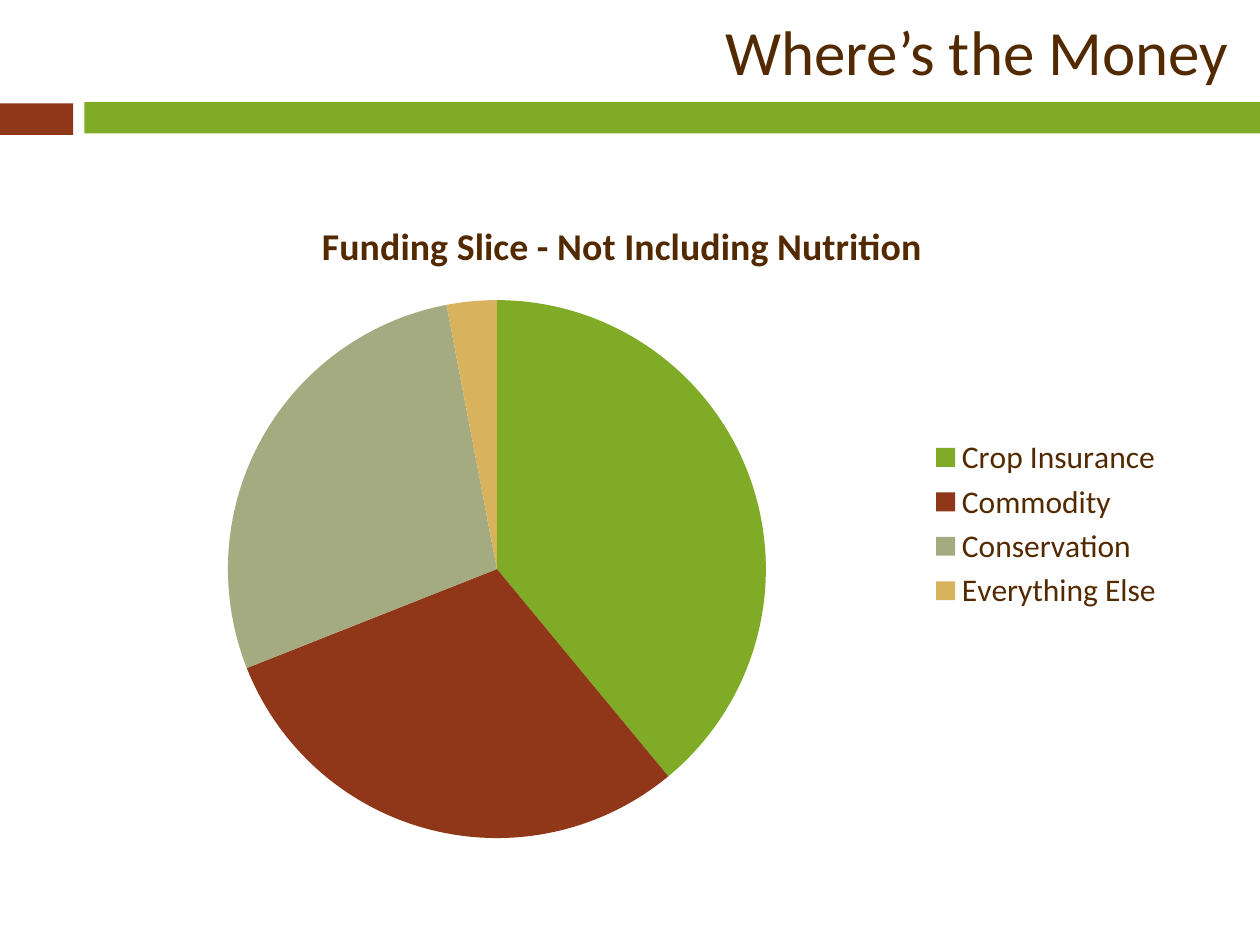
from dataclasses import dataclass

from pptx import Presentation
from pptx.chart.data import CategoryChartData as Data
from pptx.dml.color import RGBColor as Rgb
from pptx.enum.chart import XL_CHART_TYPE as Kind, XL_LEGEND_POSITION as Side
from pptx.enum.shapes import MSO_SHAPE as Form
from pptx.enum.text import MSO_ANCHOR as Anchor, PP_ALIGN as Align
from pptx.util import Inches, Pt

HUES = {
    "text": "532A00",
    "green": "7FAB26",
    "rust": "90371A",
    "sage": "A5AB81",
    "gold": "D8B25C",
}


@dataclass
class Bar:
    left: float
    top: float
    width: float
    height: float
    hue: str


@dataclass
class Slice:
    name: str
    value: int
    hue: str


BARS = [
    Bar(0, 0.82, 0.58, 0.25, "rust"),
    Bar(0.67, 0.81, 9.33, 0.25, "green"),
]
SLICES = [
    Slice("Crop Insurance", 39, "green"),
    Slice("Commodity", 30, "rust"),
    Slice("Conservation", 28, "sage"),
    Slice("Everything Else", 3, "gold"),
]
CAPTION = "Funding Slice - Not Including Nutrition"


def paint(fill, hue: str) -> None:
    fill.solid()
    fill.fore_color.rgb = Rgb.from_string(HUES[hue])


def style(font, size: float, bold: bool = False) -> None:
    for key, value in {"name": "Calibri", "size": Pt(size), "bold": bold}.items():
        setattr(font, key, value)
    font.color.rgb = Rgb.from_string(HUES["text"])


def draw_bar(slide, bar: Bar) -> None:
    box = map(Inches, (bar.left, bar.top, bar.width, bar.height))
    shape = slide.shapes.add_shape(Form.RECTANGLE, *box)
    shape.shadow.inherit = False
    shape.line.fill.background()
    paint(shape.fill, bar.hue)


def set_title(slide, text: str) -> None:
    title = slide.shapes.title
    place = {"left": 2.9, "top": 0.06, "width": 6.95, "height": 0.68}
    for key, value in place.items():
        setattr(title, key, Inches(value))
    frame = title.text_frame
    frame.text = text
    frame.vertical_anchor = Anchor.MIDDLE
    para = frame.paragraphs[0]
    para.alignment = Align.RIGHT
    style(para.runs[0].font, 36)


def draw_pie(slide, parts: list[Slice]) -> None:
    data = Data()
    data.categories = [part.name for part in parts]
    data.add_series(CAPTION, [part.value for part in parts])
    box = map(Inches, (0.54, 1.53, 8.8, 5.26))
    chart = slide.shapes.add_chart(Kind.PIE, *box, data).chart
    style(chart.font, 18)

    # Chart title and legend
    chart.has_title = True
    frame = chart.chart_title.text_frame
    frame.text = CAPTION
    style(frame.paragraphs[0].runs[0].font, 21.6, True)
    chart.has_legend = True
    chart.legend.position = Side.RIGHT
    chart.legend.include_in_layout = False

    # Slice colours
    plot = chart.plots[0]
    plot.vary_by_categories = True
    for i, part in enumerate(parts):
        paint(plot.series[0].points[i].format.fill, part.hue)


def main() -> None:
    deck = Presentation()
    deck.slide_width, deck.slide_height = Inches(10), Inches(7.5)
    slide = deck.slides.add_slide(deck.slide_layouts[5])
    for bar in BARS:
        draw_bar(slide, bar)
    set_title(slide, "Where’s the Money")
    draw_pie(slide, SLICES)
    deck.save("out.pptx")


if __name__ == "__main__":
    main()
